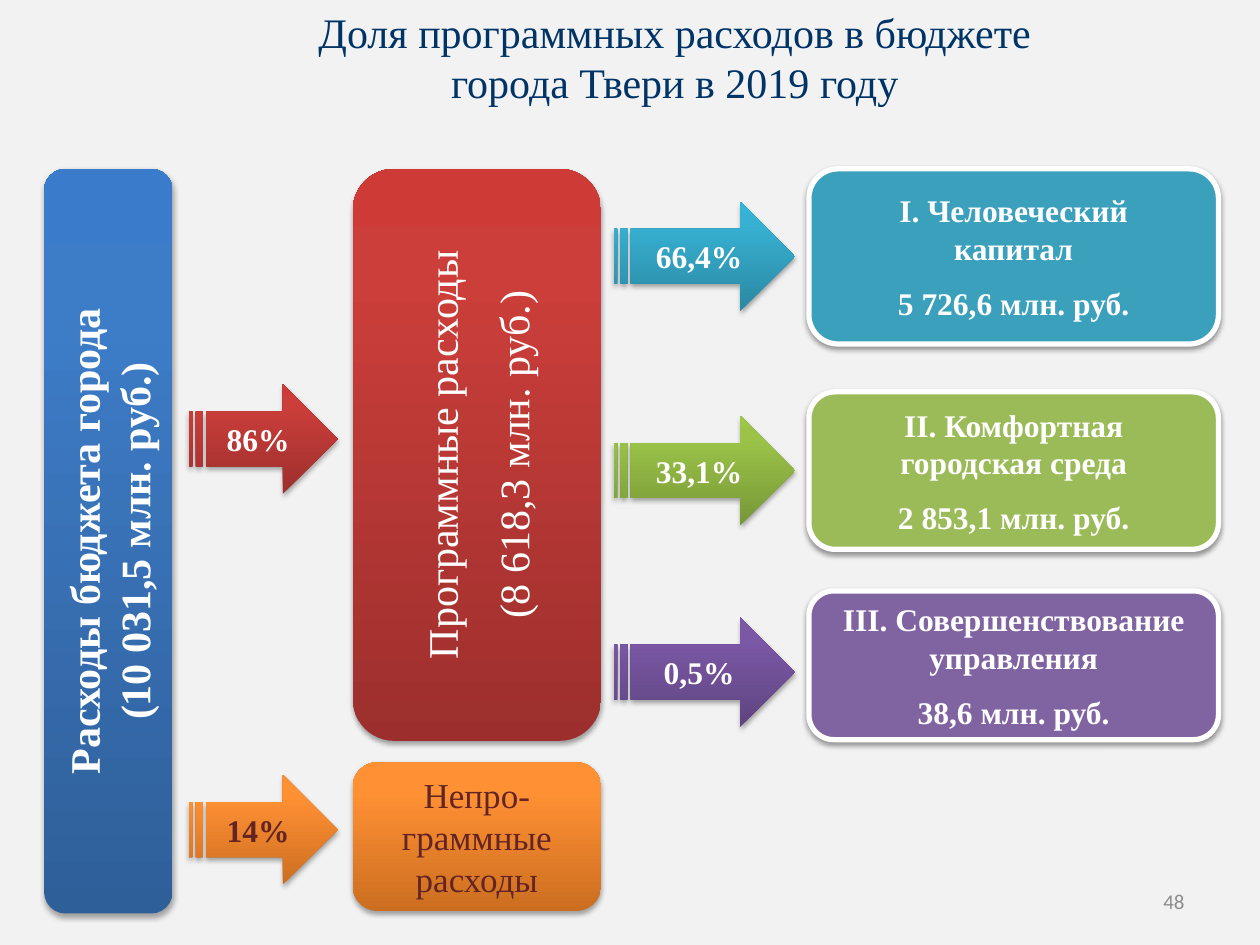
from copy import deepcopy
from pptx import Presentation
from pptx.dml.color import RGBColor
from pptx.enum.shapes import MSO_SHAPE
from pptx.enum.text import MSO_ANCHOR, PP_ALIGN
from pptx.oxml import parse_xml
from pptx.oxml.ns import nsdecls, qn
from pptx.util import Inches, Pt

SERIF = "Times New Roman"
WHITE, BROWN = "FFFFFF", "632523"
RED = ("9C2F2D", "CB3E3A", "CE3B37")
ORANGE = ("CC6E20", "FF9034", "FF9136")
BLUE = ("2F5F99", "3D7CC7", "3A7CCB")
TEAL = ("2A88A2", "37B1D2", "34B4D6")
GREEN = ("779737", "9BC348", "9DC746")
PURPLE = ("5F4480", "7B58A6", "7C57A8")


def write(shape, lines, look, align=PP_ALIGN.CENTER, gap=0):
    """Fill a shape with lines; gap is the space in points before the last."""
    frame = shape.text_frame
    frame.word_wrap = True
    for i, line in enumerate(lines):
        para = frame.paragraphs[0] if i == 0 else frame.add_paragraph()
        para.text = line
        para.alignment = align
        for run in para.runs:
            for key, value in look.items():
                if key == "color":
                    run.font.color.rgb = RGBColor.from_string(value)
                else:
                    setattr(run.font, key, value)
    if gap:
        para.space_before = Pt(gap)


def block(kind, box, paint, alpha=35, dist=1.8):
    """Add a shadowed shape; paint is one colour or three gradient stops."""
    shape = slide.shapes.add_shape(kind, *map(Inches, box))
    if isinstance(paint, str):
        shape.fill.solid()
        shape.fill.fore_color.rgb = RGBColor.from_string(paint)
        shape.line.color.rgb = RGBColor.from_string(WHITE)
        shape.line.width = Pt(3)
    else:
        shape.fill.gradient()
        shape.fill.gradient_angle = 90
        stops = shape._element.spPr.find(qn("a:gradFill")).find(qn("a:gsLst"))
        stops.append(deepcopy(stops[-1]))
        for stop, place, color in zip(shape.fill.gradient_stops, (0, 0.8, 1), paint):
            stop.position = place
            stop.color.rgb = RGBColor.from_string(color)
        shape.line.fill.background()
    shape.shadow.inherit = False
    shape._element.spPr.find(qn("a:effectLst")).append(parse_xml(
        f'<a:outerShdw {nsdecls("a")} blurRad="{Pt(3.1)}" dist="{Pt(dist)}" '
        f'dir="5400000" rotWithShape="0"><a:srgbClr val="000000">'
        f'<a:alpha val="{alpha * 1000}"/></a:srgbClr></a:outerShdw>'))
    shape.text_frame.vertical_anchor = MSO_ANCHOR.MIDDLE
    return shape


deck = Presentation()
deck.slide_width, deck.slide_height = Inches(10), Inches(7.5)
slide = deck.slides.add_slide(deck.slide_layouts[6])
slide.background.fill.solid()
slide.background.fill.fore_color.rgb = RGBColor.from_string("F2F2F2")

# Title and page number
title = slide.shapes.add_textbox(*map(Inches, (0.71, 0, 9.29, 0.91)))
write(title, ["Доля программных расходов в бюджете", "города Твери в 2019 году"],
      {"name": SERIF, "size": Pt(24), "color": "003366"})
page = slide.shapes.add_textbox(*map(Inches, (7.17, 6.95, 2.33, 0.4)))
page.text_frame.vertical_anchor = MSO_ANCHOR.MIDDLE
write(page, ["48"], {"name": "Calibri", "size": Pt(12), "color": "8C8C8C"},
      PP_ALIGN.RIGHT)

# Budget total and its two parts
parts = [
    ((0.35, 1.34, 1.02, 5.91), BLUE, WHITE, 24, True, 0, True,
     ["Расходы бюджета города", "(10 031,5 млн. руб.)"]),
    ((2.8, 1.34, 1.97, 4.54), RED, WHITE, 24, False, 12, True,
     ["Программные расходы", "(8 618,3 млн. руб.)"]),
    ((2.8, 6.05, 1.97, 1.18), ORANGE, BROWN, 20, False, 0, False,
     ["Непро-граммные расходы"]),
]
for box, paint, color, size, bold, gap, upright, lines in parts:
    part = block(MSO_SHAPE.ROUNDED_RECTANGLE, box, paint)
    if upright:
        part.text_frame._txBody.bodyPr.set("vert", "vert270")
    write(part, lines, {"name": SERIF, "size": Pt(size), "bold": bold,
                        "color": color}, gap=gap)

# Programme groups
strong = {"name": SERIF, "size": Pt(18), "bold": True, "color": WHITE}
groups = [
    (1.34, 1.39, "3BA0BB", "I. Человеческий\vкапитал", "5 726,6 млн. руб."),
    (3.11, 1.25, "9BBB59", "II. Комфортная\vгородская среда", "2 853,1 млн. руб."),
    (4.69, 1.18, "8064A2", "III. Совершенствование\vуправления", "38,6 млн. руб."),
]
for top, height, paint, name, amount in groups:
    group = block(MSO_SHAPE.ROUNDED_RECTANGLE, (6.42, top, 3.25, height), paint,
                  alpha=38, dist=1.6)
    write(group, [name, amount], strong, gap=9.5)

# Share arrows
arrows = [
    (1.5, 3.05, 1.18, RED, WHITE, "86%"),
    (1.5, 6.15, 1.18, ORANGE, BROWN, "14%"),
    (4.87, 1.6, 1.44, TEAL, WHITE, "66,4%"),
    (4.87, 3.3, 1.44, GREEN, WHITE, "33,1%"),
    (4.87, 4.9, 1.44, PURPLE, WHITE, "0,5%"),
]
for left, top, width, paint, color, share in arrows:
    arrow = block(MSO_SHAPE.STRIPED_RIGHT_ARROW, (left, top, width, 0.87), paint)
    write(arrow, [share], {**strong, "color": color})

deck.save("out.pptx")
